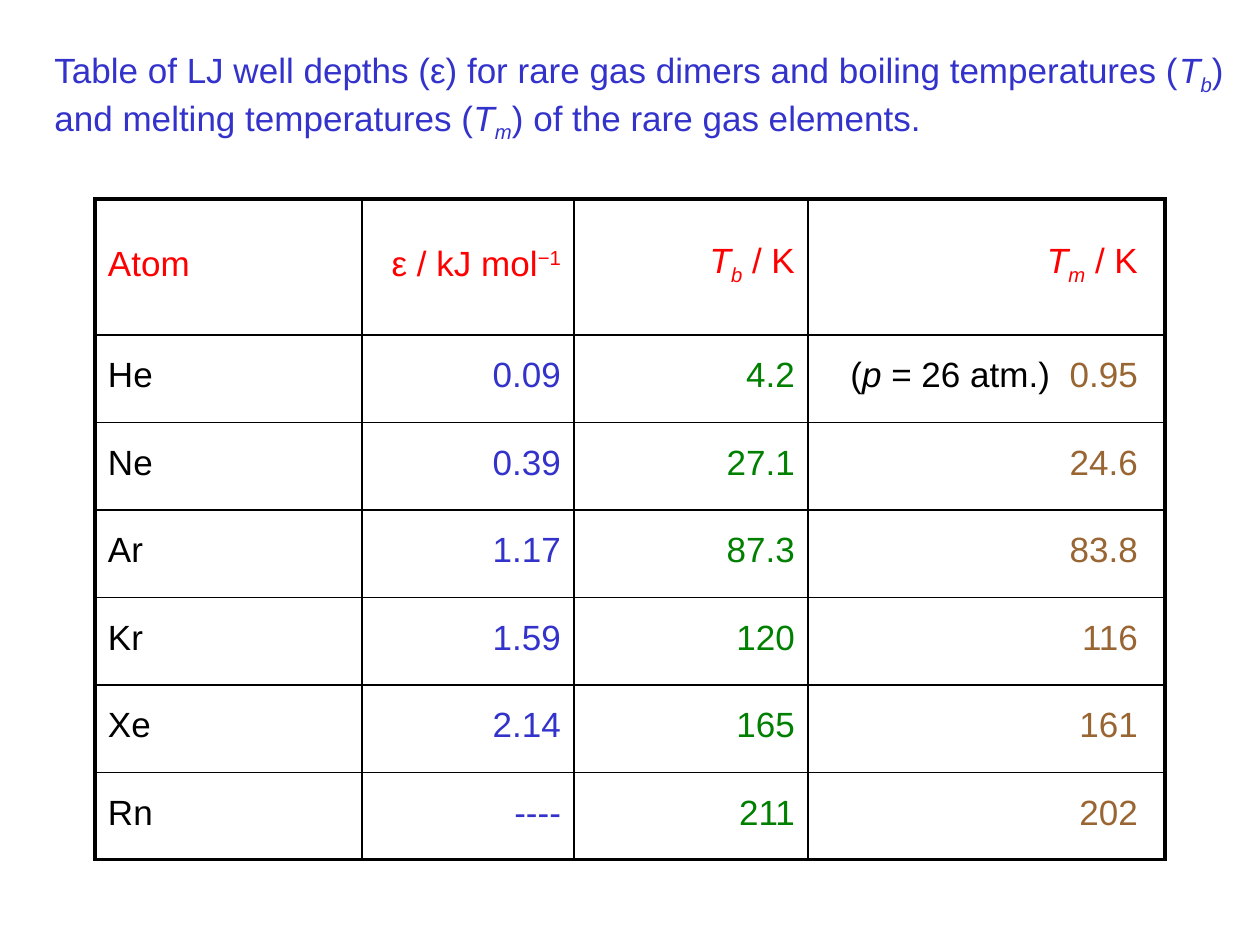
from lxml import etree
from pptx import Presentation, util as u
from pptx.dml.color import RGBColor
from pptx.enum import text
from pptx.oxml.ns import qn

PX = 914400 // 126
BLACK = RGBColor(0, 0, 0)
RED = RGBColor(0xFF, 0, 0)
BLUE = RGBColor(0x33, 0x33, 0xCC)
GREEN = RGBColor(0, 0x80, 0)
BROWN = RGBColor(0x99, 0x66, 0x33)

# Content: each line is a list of (text, format) runs
ITALIC = {"italic": True}
SUB = {"italic": True, "baseline": -25}
SUP = {"baseline": 30}
T_B = [("T", ITALIC), ("b", SUB)]
T_M = [("T", ITALIC), ("m", SUB)]
TITLE = [
    [("Table of LJ well depths (ε) for rare gas dimers and boiling temperatures (", {}),
     *T_B, (")", {})],
    [("and melting temperatures (", {}), *T_M, (") of the rare gas elements.", {})],
]
HEADER = [
    [("Atom", {})],
    [("ε / kJ mol", {}), ("−1", SUP)],
    [*T_B, (" / K", {})],
    [*T_M, (" / K", {})],
]
ROWS = [
    ("He", "0.09", "4.2", "0.95"),
    ("Ne", "0.39", "27.1", "24.6"),
    ("Ar", "1.17", "87.3", "83.8"),
    ("Kr", "1.59", "120", "116"),
    ("Xe", "2.14", "165", "161"),
    ("Rn", "----", "211", "202"),
]
PRESSURE = [("(", {"color": BLACK}), ("p", {"color": BLACK, "italic": True}),
            (" = 26 atm.)  ", {"color": BLACK})]
COL_COLORS = [BLACK, BLUE, GREEN, BROWN]

# Layout in px
TITLE_BOX = (42, 42, 1206, 97)
TABLE_X, TABLE_Y, TABLE_H = 95, 199, 661
COL_W = [267, 212, 234, 357]
HEAD_H = 136
ROW_H = (TABLE_H - HEAD_H) / len(ROWS)
INSETS = [13, 13, 13, 27]


def px(n):
    return u.Emu(round(n * PX))


def add_run(p, txt, color=BLACK, size=20, italic=False, baseline=0):
    r = p.add_run()
    r.text = txt
    f = r.font
    f.name, f.size, f.italic = "Arial", u.Pt(size), italic
    f.color.rgb = color
    if baseline:
        r._r.get_or_add_rPr().set("baseline", str(baseline * 1000))


def add_runs(p, runs, color):
    for txt, fmt in runs:
        add_run(p, txt, **{"color": color, **fmt})


def set_borders(cell, widths):
    tcPr = cell._tc.get_or_add_tcPr()
    for i, (side, width) in enumerate(widths.items()):
        ln = etree.Element(qn("a:ln" + side), w=str(u.Pt(width)))
        fill = etree.SubElement(ln, qn("a:solidFill"))
        etree.SubElement(fill, qn("a:srgbClr"), val=str(BLACK))
        tcPr.insert(i, ln)


prs = Presentation()
prs.slide_width, prs.slide_height = u.Inches(10), u.Inches(7.5)
s = prs.slides.add_slide(prs.slide_layouts[6])

# Table
cells = [HEADER] + [[[(v, {})] for v in row] for row in ROWS]
cells[1][3] = PRESSURE + cells[1][3]
n_rows, n_cols = len(cells), len(COL_W)
tbl = s.shapes.add_table(n_rows, n_cols, px(TABLE_X), px(TABLE_Y),
                         px(sum(COL_W)), px(TABLE_H)).table
tbl.first_row = tbl.horz_banding = False
for col, w in zip(tbl.columns, COL_W):
    col.width = px(w)
for i, row in enumerate(cells):
    tbl.rows[i].height = px(ROW_H if i else HEAD_H)
    for j, runs in enumerate(row):
        cell = tbl.cell(i, j)
        cell.fill.background()
        cell.vertical_anchor = text.MSO_ANCHOR.MIDDLE
        cell.margin_left = cell.margin_right = px(INSETS[j])
        cell.margin_top, cell.margin_bottom = 0, px(6)
        p = cell.text_frame.paragraphs[0]
        p.alignment = text.PP_ALIGN.RIGHT if j else text.PP_ALIGN.LEFT
        p.space_before = u.Pt(5 if i else 4)
        add_runs(p, runs, COL_COLORS[j] if i else RED)
        outer = {"L": j == 0, "R": j == n_cols - 1, "T": i == 0, "B": i == n_rows - 1}
        set_borders(cell, {side: 2.25 if edge else 1 for side, edge in outer.items()})

# Title
tf = s.shapes.add_textbox(*map(px, TITLE_BOX)).text_frame
tf.word_wrap = False
tf.auto_size = text.MSO_AUTO_SIZE.SHAPE_TO_FIT_TEXT
for i, line in enumerate(TITLE):
    add_runs(tf.add_paragraph() if i else tf.paragraphs[0], line, BLUE)

prs.save("out.pptx")
